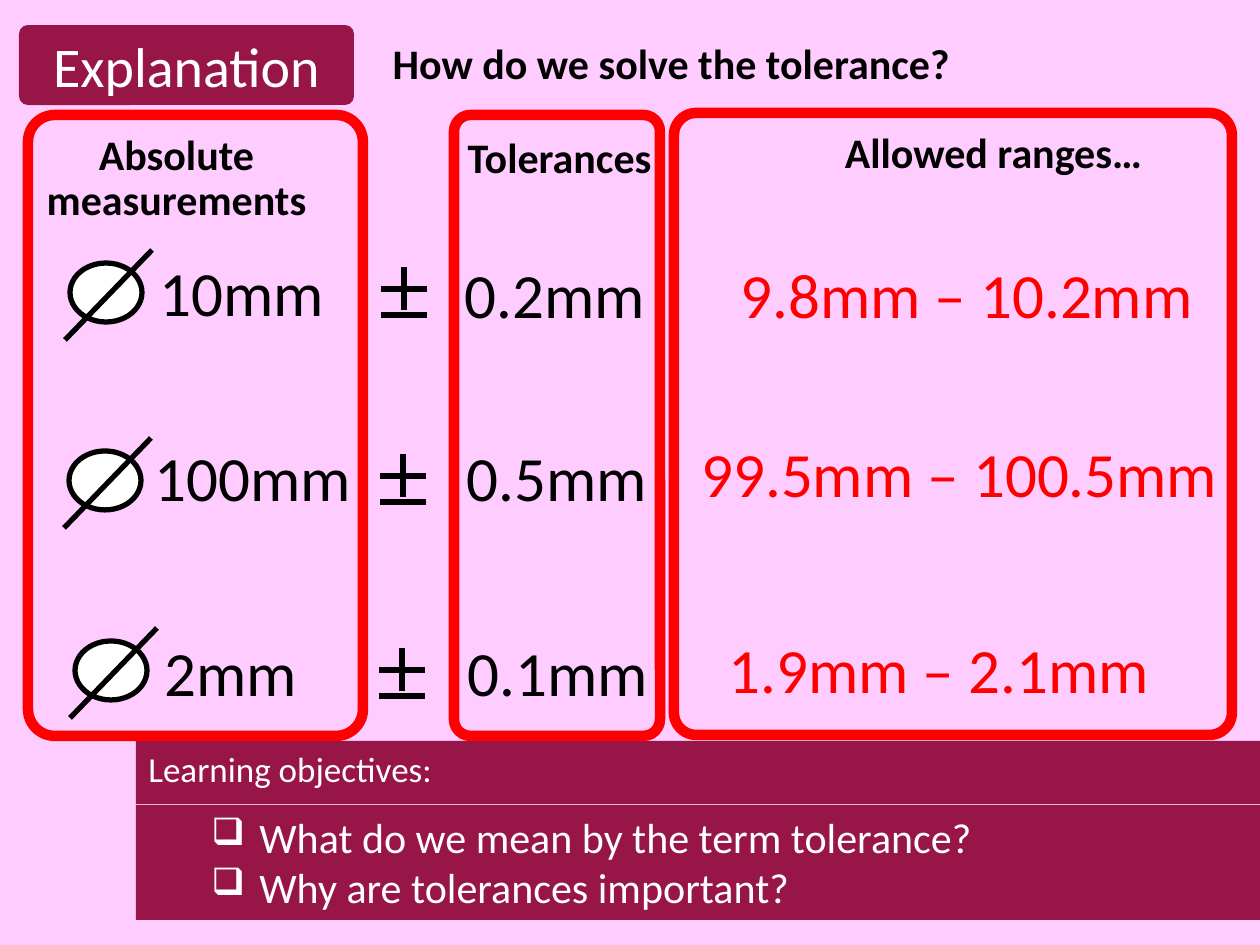
from lxml.etree import SubElement
from pptx import Presentation
from pptx.dml.color import RGBColor
from pptx.enum.shapes import MSO_CONNECTOR, MSO_SHAPE
from pptx.enum.text import MSO_ANCHOR, MSO_AUTO_SIZE, PP_ALIGN
from pptx.oxml.ns import qn
from pptx.util import Pt

SCALE = 914400 // 126
PINK = RGBColor(0xFF, 0xCC, 0xFF)
WINE = RGBColor(0x98, 0x16, 0x47)
RED = RGBColor(0xFF, 0x00, 0x00)
WHITE = RGBColor(0xFF, 0xFF, 0xFF)
BLACK = RGBColor(0x00, 0x00, 0x00)

GOALS = ["What do we mean by the term tolerance?", "Why are tolerances important?"]
HEADS = [
    ("Absolute measurements", (10, 128, 333, 77)),
    ("Tolerances", (393, 131, 333, 77)),
    ("Allowed ranges…", (827, 126, 333, 77)),
]
FRAMES = [
    ((28, 115, 335, 621), 0.08),
    ((454, 115, 206, 621), 0.08),
    ((674, 113, 558, 622), 0.04),
]
ROWS = [
    ((70, 263), (404, 289), [("10mm", 147, 247, 246, BLACK),
                             ("0.2mm", 452, 249, 246, BLACK),
                             ("9.8mm – 10.2mm", 728, 249, 485, RED)]),
    ((69, 451), (403, 476), [("100mm", 142, 432, 246, BLACK),
                             ("0.5mm", 454, 432, 246, BLACK),
                             ("99.5mm – 100.5mm", 689, 428, 587, RED)]),
    ((75, 641), (402, 670), [("2mm", 152, 627, 246, BLACK),
                             ("0.1mm", 455, 627, 246, BLACK),
                             ("1.9mm – 2.1mm", 716, 624, 485, RED)]),
]


def px(*nums):
    """Turn px lengths into EMU."""
    return [num * SCALE for num in nums]


def write(shape, *lines, size=24, color=BLACK, bold=False, align=PP_ALIGN.LEFT,
          anchor=MSO_ANCHOR.TOP, space=1.0, bullet=None):
    """Fill a shape with one formatted paragraph per line."""
    frame = shape.text_frame
    frame.word_wrap = True
    frame.auto_size = MSO_AUTO_SIZE.NONE
    frame.vertical_anchor = anchor
    for num, line in enumerate(lines):
        para = frame.add_paragraph() if num else frame.paragraphs[0]
        para.alignment = align
        para.line_spacing = space
        if bullet:
            mark(para, bullet)
        para.text = line
        font = para.font
        font.name, font.size, font.bold = "Calibri", Pt(size), bold
        font.color.rgb = color


def mark(para, sign):
    """Give a paragraph a hanging bullet."""
    props = para._p.get_or_add_pPr()
    left, hang = px(111, 48)
    props.set("marL", str(left))
    props.set("indent", str(-hang))
    SubElement(props, qn("a:buSzPct"), val="90000")
    SubElement(props, qn("a:buChar"), char=sign)


def label(shapes, text, box, **form):
    """Add a text box."""
    write(shapes.add_textbox(*px(*box)), text, **form)


def block(shapes, kind, box, fill=None, line=None, width=3, curve=None):
    """Add a preset shape with an optional fill and outline."""
    shape = shapes.add_shape(kind, *px(*box))
    shape.shadow.inherit = False
    if curve is not None:
        shape.adjustments[0] = curve
    if fill is None:
        shape.fill.background()
    else:
        shape.fill.solid()
        shape.fill.fore_color.rgb = fill
    if line is None:
        shape.line.fill.background()
    else:
        shape.line.color.rgb = line
        shape.line.width = Pt(width)
    return shape


def stroke(shapes, *ends):
    """Add a straight black line."""
    line = shapes.add_connector(MSO_CONNECTOR.STRAIGHT, *px(*ends))
    line.line.color.rgb = BLACK
    line.line.width = Pt(3)
    SubElement(line._element.spPr, qn("a:effectLst"))


def bore(shapes, x, y):
    """Draw a diameter sign from the corner of its ellipse."""
    group = shapes.add_group_shape().shapes
    block(group, MSO_SHAPE.OVAL, (x, y, 72, 59), WHITE, BLACK)
    stroke(group, x + 82, y - 13, x - 5, y + 77)


def plus(shapes, x, y):
    """Draw a plus-minus sign around the centre of its cross."""
    group = shapes.add_group_shape().shapes
    stroke(group, x, y - 22, x, y + 21)
    for drop in (0, 26):
        stroke(group, x + 23, y + drop, x - 23, y + drop)


def banner(shapes):
    """Add the wine-coloured section label and objectives."""
    goals = block(shapes, MSO_SHAPE.RECTANGLE, (136, 805, 1124, 115), WINE)
    write(goals, *GOALS, color=WHITE, bullet="❑")
    head = block(shapes, MSO_SHAPE.RECTANGLE, (136, 741, 1124, 63), WINE)
    write(head, "Learning objectives:", size=20, color=WHITE)
    tab = block(shapes, MSO_SHAPE.ROUNDED_RECTANGLE, (19, 25, 335, 80), WINE, curve=0.11)
    write(tab, "Explanation", size=32, color=WHITE, align=PP_ALIGN.CENTER,
          anchor=MSO_ANCHOR.MIDDLE)


def main():
    """Build and save the slide."""
    deck = Presentation()
    deck.slide_width, deck.slide_height = px(1260, 945)
    slide = deck.slides.add_slide(deck.slide_layouts[5])
    slide.background.fill.solid()
    slide.background.fill.fore_color.rgb = PINK
    shapes = slide.shapes
    banner(shapes)
    title = shapes.title
    title.left, title.top, title.width, title.height = px(380, 37, 880, 77)
    write(title, "How do we solve the tolerance?", bold=True, space=0.9)
    for hole, sign, cells in ROWS:
        bore(shapes, *hole)
        plus(shapes, *sign)
        for text, x, y, width, color in cells:
            label(shapes, text, (x, y, width, 89), size=36, color=color)
    for text, box in HEADS:
        label(shapes, text, box, bold=True, align=PP_ALIGN.CENTER, space=0.9)
    for box, curve in FRAMES:
        block(shapes, MSO_SHAPE.ROUNDED_RECTANGLE, box, line=RED, width=6, curve=curve)
    deck.save("out.pptx")


if __name__ == "__main__":
    main()
